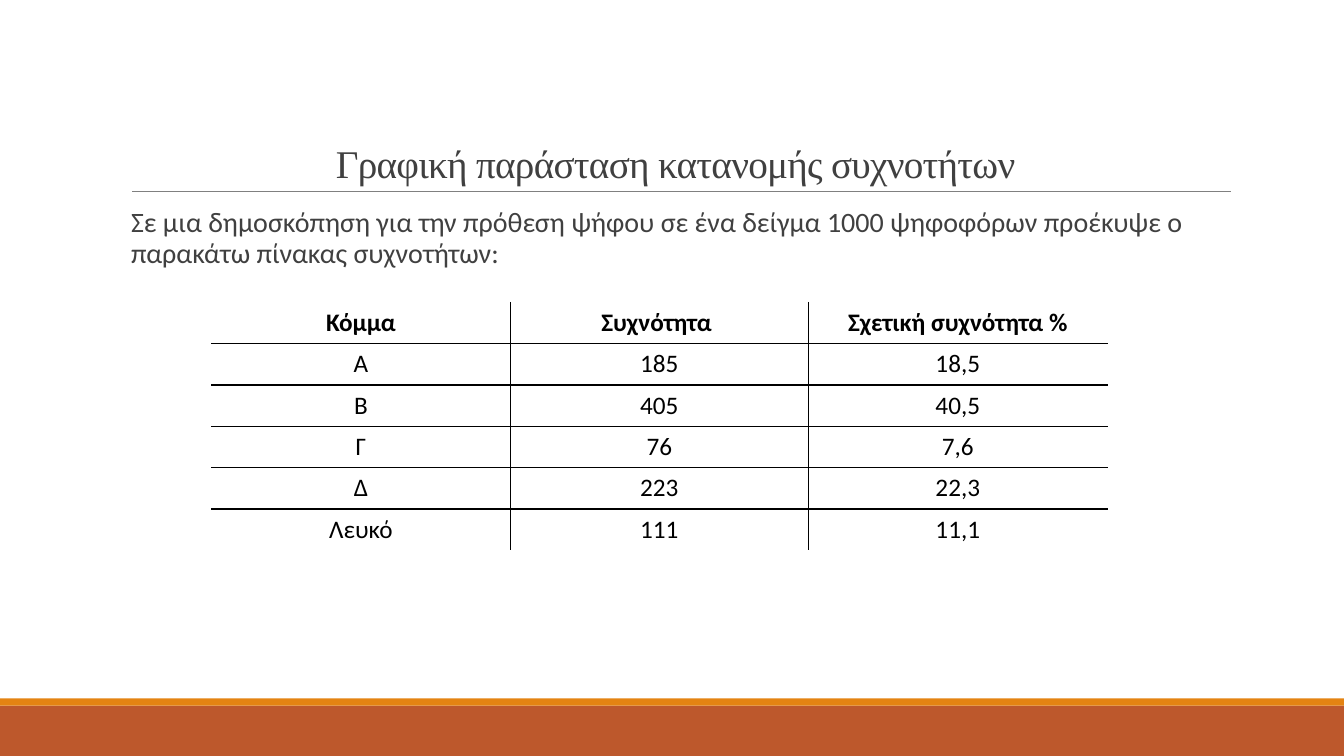
from dataclasses import dataclass

from lxml import etree
from pptx import Presentation
from pptx.dml.color import RGBColor
from pptx.enum.shapes import MSO_CONNECTOR, MSO_SHAPE
from pptx.enum.text import MSO_ANCHOR, MSO_AUTO_SIZE, PP_ALIGN
from pptx.oxml.ns import qn
from pptx.util import Inches, Pt

RECT = MSO_SHAPE.RECTANGLE
LINE = MSO_CONNECTOR.STRAIGHT
CENTER = PP_ALIGN.CENTER
TOP, MIDDLE, BOTTOM = MSO_ANCHOR.TOP, MSO_ANCHOR.MIDDLE, MSO_ANCHOR.BOTTOM
NO_FIT = MSO_AUTO_SIZE.NONE

WHITE = RGBColor(0xFF, 0xFF, 0xFF)
BLACK = RGBColor(0x00, 0x00, 0x00)
GREY = RGBColor(0x80, 0x80, 0x80)
DARK = RGBColor(0x40, 0x40, 0x40)
RUST = RGBColor(0xBD, 0x58, 0x2C)
ORANGE = RGBColor(0xE4, 0x83, 0x12)

TITLE = "Γραφική παράσταση κατανομής συχνοτήτων"
INTRO = ("Σε μια δημοσκόπηση για την πρόθεση ψήφου σε ένα δείγμα 1000 "
         "ψηφοφόρων προέκυψε ο παρακάτω πίνακας συχνοτήτων:")
VOTES = [
    ("Κόμμα", "Συχνότητα ", "Σχετική συχνότητα %"),
    ("Α", "185", "18,5"),
    ("Β", "405", "40,5"),
    ("Γ", "76", "7,6"),
    ("Δ", "223", "22,3"),
    ("Λευκό", "111", "11,1"),
]
COL_W, ROW_H = 2.96, 0.41


@dataclass
class Band:
    top: float
    height: float
    color: RGBColor


@dataclass
class Style:
    font: str
    size: float
    color: RGBColor
    bold: bool = False


BANDS = [Band(7, 0.5, RUST), Band(6.93, 0.07, ORANGE)]


def add_band(slide, band: Band) -> None:
    bar = slide.shapes.add_shape(RECT, 0, Inches(band.top), Inches(13.33),
                                 Inches(band.height))
    bar.shadow.inherit = False
    bar.fill.solid()
    bar.fill.fore_color.rgb = band.color
    bar.line.fill.background()


def add_rule(slide) -> None:
    rule = slide.shapes.add_connector(LINE, Inches(1.31), Inches(1.9),
                                      Inches(12.21), Inches(1.9))
    rule.line.color.rgb = GREY
    rule.line.width = Pt(0.5)
    etree.SubElement(rule._element.spPr, qn("a:effectLst"))


def style_text(para, style: Style) -> None:
    for run in para.runs:
        run.font.name = style.font
        run.font.size = Pt(style.size)
        run.font.bold = style.bold
        run.font.color.rgb = style.color


def fill_holder(shape, top: float, height: float, text: str, style: Style):
    shape.left, shape.top = Inches(1.2), Inches(top)
    shape.width, shape.height = Inches(11), Inches(height)
    frame = shape.text_frame
    frame.text = text
    frame.word_wrap = True
    frame.auto_size = NO_FIT
    style_text(frame.paragraphs[0], style)
    return frame


def set_title(slide) -> None:
    frame = fill_holder(slide.shapes.title, 0.31, 1.59, TITLE,
                        Style("Times New Roman", 28, DARK))
    frame.vertical_anchor = BOTTOM
    para = frame.paragraphs[0]
    para.alignment = CENTER
    para.line_spacing = 0.85
    para.runs[0].font._element.set("spc", "-50")


def set_intro(slide) -> None:
    frame = fill_holder(slide.placeholders[1], 2.02, 4.4, INTRO,
                        Style("Calibri", 20, DARK))
    frame.vertical_anchor = TOP
    frame.margin_left = frame.margin_right = 0
    para = frame.paragraphs[0]
    para.line_spacing = 0.9
    para.space_before, para.space_after = Pt(12), Pt(2)
    # Blank bullet with a hanging indent
    props = para._p.get_or_add_pPr()
    props.set("marL", str(Inches(0.1)))
    props.set("indent", str(Inches(-0.1)))
    tint = etree.SubElement(props, qn("a:buClr"))
    etree.SubElement(tint, qn("a:srgbClr"), val=str(ORANGE))
    etree.SubElement(props, qn("a:buChar"), char=" ")


def set_border(cell, side: str, color: RGBColor) -> None:
    props = cell._tc.get_or_add_tcPr()
    edge = etree.SubElement(props, qn(f"a:ln{side}"), w=str(Pt(1)))
    fill = etree.SubElement(edge, qn("a:solidFill"))
    etree.SubElement(fill, qn("a:srgbClr"), val=str(color))


def add_votes(slide) -> None:
    rows, cols = len(VOTES), len(VOTES[0])
    table = slide.shapes.add_table(rows, cols, Inches(2.1), Inches(3),
                                   Inches(cols * COL_W),
                                   Inches(rows * ROW_H)).table
    table.first_row = table.horz_banding = False
    for col in table.columns:
        col.width = Inches(COL_W)
    for row in table.rows:
        row.height = Inches(ROW_H)
    for r, texts in enumerate(VOTES):
        for c, text in enumerate(texts):
            cell = table.cell(r, c)
            cell.text = text
            cell.vertical_anchor = MIDDLE if r else TOP
            para = cell.text_frame.paragraphs[0]
            para.alignment = CENTER
            style_text(para, Style("Calibri", 18, BLACK, r == 0))
            # Outer edges are white, inner ones black
            outer = {"L": c == 0, "R": c == cols - 1,
                     "T": r == 0, "B": r == rows - 1}
            for side, edge in outer.items():
                set_border(cell, side, WHITE if edge else BLACK)
            cell.fill.background()


def main() -> None:
    deck = Presentation()
    deck.slide_width, deck.slide_height = Inches(13.33), Inches(7.5)
    slide = deck.slides.add_slide(deck.slide_layouts[1])
    slide.background.fill.solid()
    slide.background.fill.fore_color.rgb = WHITE
    # Footer bands and title rule
    for band in BANDS:
        add_band(slide, band)
    add_rule(slide)
    # Text and table
    set_title(slide)
    set_intro(slide)
    add_votes(slide)
    deck.save("out.pptx")


if __name__ == "__main__":
    main()
